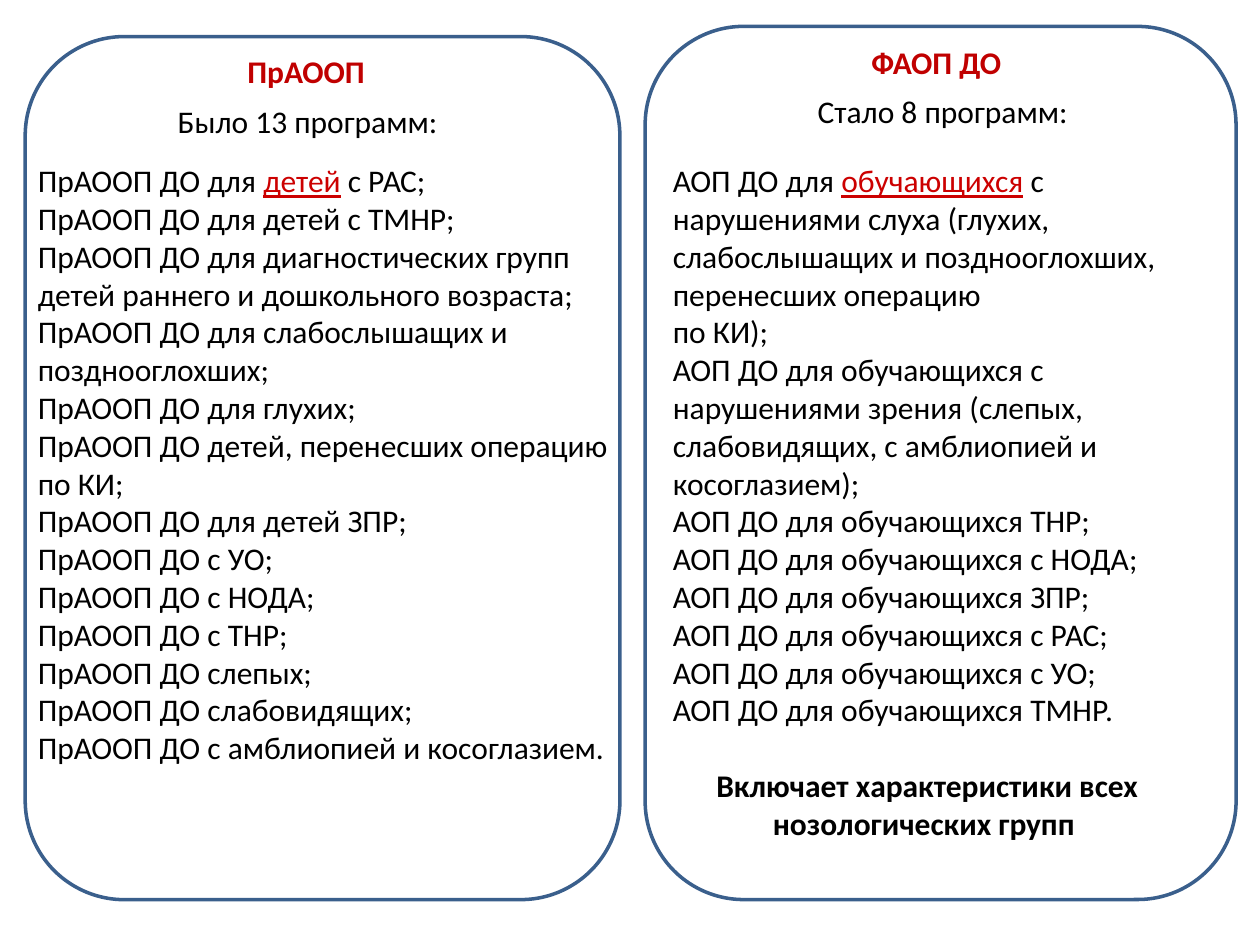
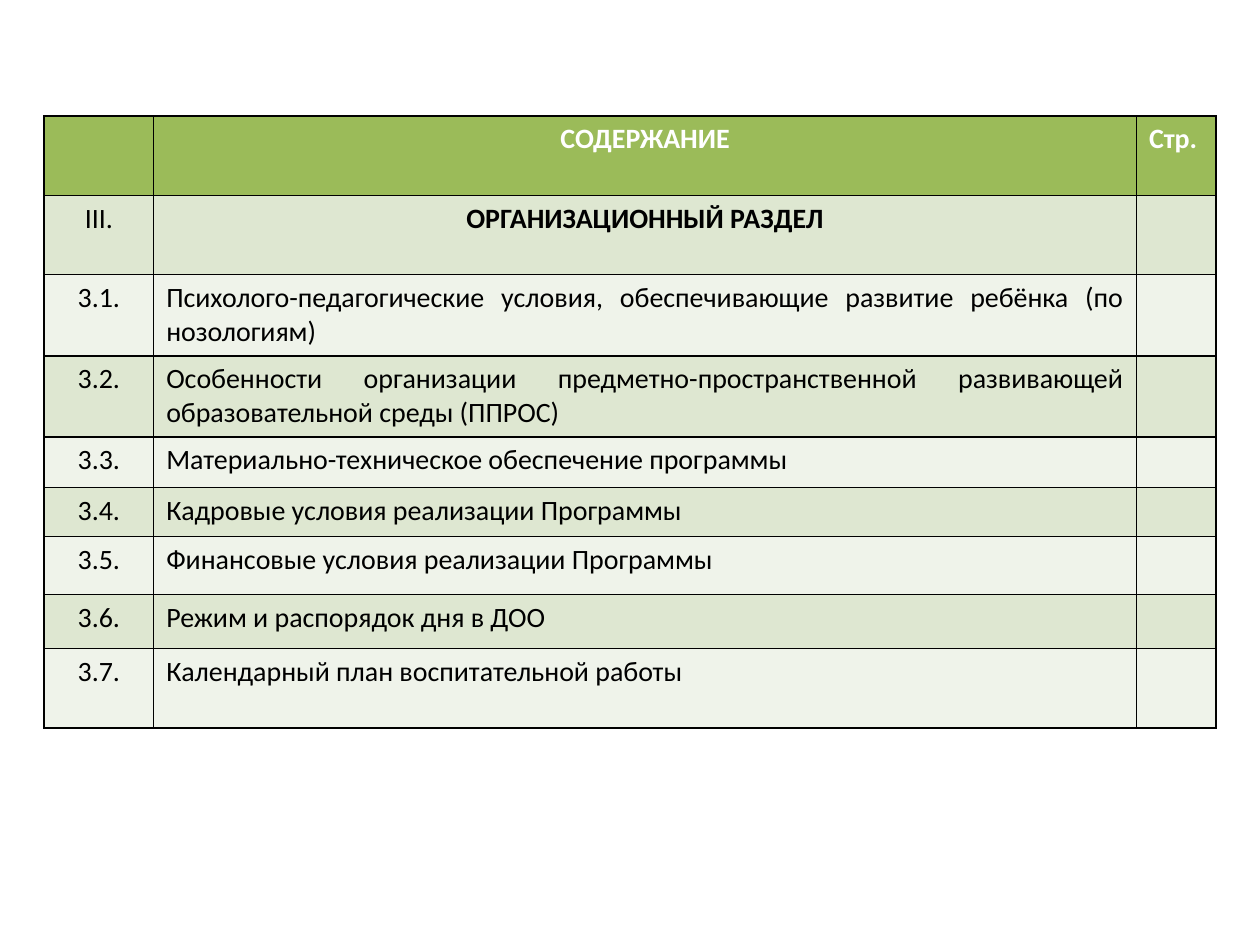
from dataclasses import dataclass

from lxml import etree
from pptx import Presentation
from pptx import util as u
from pptx.dml.color import RGBColor
from pptx.enum import shapes, text
from pptx.oxml.ns import qn


@dataclass(frozen=True)
class Theme:
    font: str = "Calibri"
    text_size: int = 18
    table_size: int = 16
    ink: str = "000000"
    white: str = "FFFFFF"
    heading: str = "C00000"
    accent: str = "CC0000"
    frame: str = "3A5F8C"
    header_fill: str = "9BBB59"
    bands: tuple = ("DEE7D1", "EFF3EA")


CENTER, JUSTIFY, LEFT = (text.PP_ALIGN.CENTER, text.PP_ALIGN.JUSTIFY, text.PP_ALIGN.LEFT)
COMPARISON, BLANK = 4, 6  # layouts of the default template


class Deck:
    def __init__(self, theme):
        self.theme = theme
        self.prs = Presentation()
        self.prs.slide_width, self.prs.slide_height = u.Inches(10), u.Inches(7.5)
        self.slide = None

    def new_slide(self, layout):
        self.slide = self.prs.slides.add_slide(self.prs.slide_layouts[layout])

    def style(self, run, color, size, bold=False):
        run.font.name = self.theme.font
        run.font.size = u.Pt(size)
        run.font.bold = bold
        run.font.color.rgb = RGBColor.from_string(color)

    def frame(self, *box):
        panel = self.slide.shapes.add_shape(
            shapes.MSO_SHAPE.FLOWCHART_ALTERNATE_PROCESS, *map(u.Inches, box))
        panel.shadow.inherit = False
        panel.fill.background()
        panel.line.color.rgb = RGBColor.from_string(self.theme.frame)
        panel.line.width = u.Pt(2)

    def set_lines(self, holder, lines, color, bold, align, wrap):
        """Fill a text holder; a word between underscores is accented."""
        frame = holder.text_frame
        frame.auto_size = text.MSO_AUTO_SIZE.NONE
        frame.vertical_anchor = text.MSO_ANCHOR.TOP
        frame.word_wrap = wrap
        frame.text = "\n".join(line.replace("_", "") for line in lines)
        for paragraph, line in zip(frame.paragraphs, lines):
            paragraph.alignment = align
            paragraph.space_before = u.Pt(0)
            pieces = line.split("_")
            paragraph.runs[0].text = pieces[0]
            for piece in pieces[1:]:
                paragraph.add_run().text = piece
            for i, run in enumerate(paragraph.runs):
                accented = i % 2 == 1
                self.style(run, self.theme.accent if accented else color,
                           self.theme.text_size, bold)
                run.font.underline = accented

    def text_box(self, box, line, bold=False):
        holder = self.slide.shapes.add_textbox(*map(u.Inches, box))
        self.set_lines(holder, [line], self.theme.ink, bold, CENTER, True)

    def placeholder(self, idx, box, lines, color=None, bold=False, align=LEFT, wrap=True):
        holder = self.slide.placeholders[idx]
        holder.left, holder.top, holder.width, holder.height = map(u.Inches, box)
        self.set_lines(holder, lines, color or self.theme.ink, bold, align, wrap)
        for paragraph in holder.text_frame.paragraphs:
            props = paragraph._p.get_or_add_pPr()
            props.set("marL", "0")
            props.set("indent", "0")
            etree.SubElement(props, qn("a:buNone"))

    def drop_title(self):
        title = self.slide.shapes.title._element
        title.getparent().remove(title)

    def border(self, cell):
        props = cell._tc.get_or_add_tcPr()
        for side in ("lnL", "lnR", "lnT", "lnB"):
            line = etree.SubElement(props, qn(f"a:{side}"), w=str(u.Pt(1)))
            solid = etree.SubElement(line, qn("a:solidFill"))
            etree.SubElement(solid, qn("a:srgbClr"), val=self.theme.ink)

    def cell(self, cell, words, fill, color, bold, align):
        self.border(cell)
        cell.fill.solid()
        cell.fill.fore_color.rgb = RGBColor.from_string(fill)
        if not words:
            cell.margin_top = cell.margin_bottom = 0
            return
        cell.text_frame.text = words
        paragraph = cell.text_frame.paragraphs[0]
        paragraph.alignment = align
        self.style(paragraph.runs[0], color, self.theme.table_size, bold)

    def contents_table(self, left, top, widths, heights, rows):
        theme = self.theme
        table = self.slide.shapes.add_table(
            len(rows), len(widths),
            *map(u.Inches, (left, top, sum(widths), sum(heights)))).table
        for column, width in zip(table.columns, widths):
            column.width = u.Inches(width)
        for r, (height, row) in enumerate(zip(heights, rows)):
            table.rows[r].height = u.Inches(height)
            header, section = r == 0, r == 1
            fill = theme.header_fill if header else theme.bands[(r - 1) % 2]
            aligns = (CENTER, CENTER if header or section else JUSTIFY, LEFT)
            for c, words in enumerate(row):
                self.cell(table.cell(r, c), words, fill,
                          theme.white if header else theme.ink,
                          header or (section and c == 1), aligns[c])


OLD_PROGRAMS = [
    "ПрАООП ДО для _детей_ с РАС;",
    "ПрАООП ДО для детей с ТМНР;",
    "ПрАООП ДО для диагностических групп детей раннего и дошкольного возраста; "
    "ПрАООП ДО для слабослышащих и позднооглохших;",
    "ПрАООП ДО для глухих;",
    "ПрАООП ДО детей, перенесших операцию по КИ;",
    "ПрАООП ДО для детей ЗПР;",
    "ПрАООП ДО с УО;",
    "ПрАООП ДО с НОДА;",
    "ПрАООП ДО с ТНР;",
    "ПрАООП ДО слепых;",
    "ПрАООП ДО слабовидящих;",
    "ПрАООП ДО с амблиопией и косоглазием.",
]
NEW_PROGRAMS = [
    "АОП ДО для _обучающихся_ с нарушениями слуха (глухих, слабослышащих "
    "и позднооглохших, перенесших операцию",
    "по КИ);",
    "АОП ДО для обучающихся с нарушениями зрения (слепых, слабовидящих, "
    "с амблиопией и косоглазием);",
    "АОП ДО для обучающихся ТНР;",
    "АОП ДО для обучающихся с НОДА;",
    "АОП ДО для обучающихся ЗПР;",
    "АОП ДО для обучающихся с РАС;",
    "АОП ДО для обучающихся с УО;",
    "АОП ДО для обучающихся ТМНР.",
]
CONDITIONS = [
    "Психолого-педагогические условия, обеспечивающие развитие ребёнка (по нозологиям) ",
    "Особенности организации предметно-пространственной развивающей "
    "образовательной среды (ППРОС)",
    "Материально-техническое обеспечение программы ",
    "Кадровые условия реализации Программы ",
    "Финансовые условия реализации Программы",
    "Режим и распорядок дня в ДОО",
    "Календарный план воспитательной работы ",
]


def compare_programs(deck):
    deck.new_slide(COMPARISON)
    deck.drop_title()
    # Each side: frame, heading, count, list
    sides = [
        ((0.2, 0.29, 4.72, 6.85), "ПрАООП", (1.86, 0.36, 1.14, 0.4),
         "Было 13 программ: ", (1.3, 0.76, 2.34, 0.4),
         OLD_PROGRAMS, (0.2, 1.23, 5, 4.95)),
        ((5.12, 0.21, 4.69, 6.93), "ФАОП ДО ", (6.81, 0.29, 1.3, 0.4),
         "Стало 8 программ: ", (6.34, 0.68, 2.34, 0.4),
         NEW_PROGRAMS, (5.24, 1.23, 4.57, 4.64)),
    ]
    for i, (frame, heading, heading_box, count, count_box, programs, list_box) in enumerate(sides):
        deck.frame(*frame)
        deck.placeholder(2 * i + 1, heading_box, [heading], deck.theme.heading,
                         bold=True, align=CENTER, wrap=False)
        deck.text_box(count_box, count)
        deck.placeholder(2 * i + 2, list_box, programs)
    # Conclusion under the new list
    deck.text_box((5.55, 6.03, 3.62, 0.71),
                  "Включает характеристики всех нозологических групп ", bold=True)


def list_contents(deck):
    deck.new_slide(BLANK)
    rows = [("", "СОДЕРЖАНИЕ", "Стр."), ("III.", "ОРГАНИЗАЦИОННЫЙ РАЗДЕЛ", "")]
    rows += [(f"3.{n}.", condition, "") for n, condition in enumerate(CONDITIONS, 1)]
    deck.contents_table(0.35, 0.92, (0.87, 7.8, 0.63),
                        [0.63] * 4 + [0.4, 0.39, 0.46, 0.43, 0.63], rows)


def main():
    deck = Deck(Theme())
    compare_programs(deck)
    list_contents(deck)
    deck.prs.save("out.pptx")


if __name__ == "__main__":
    main()
